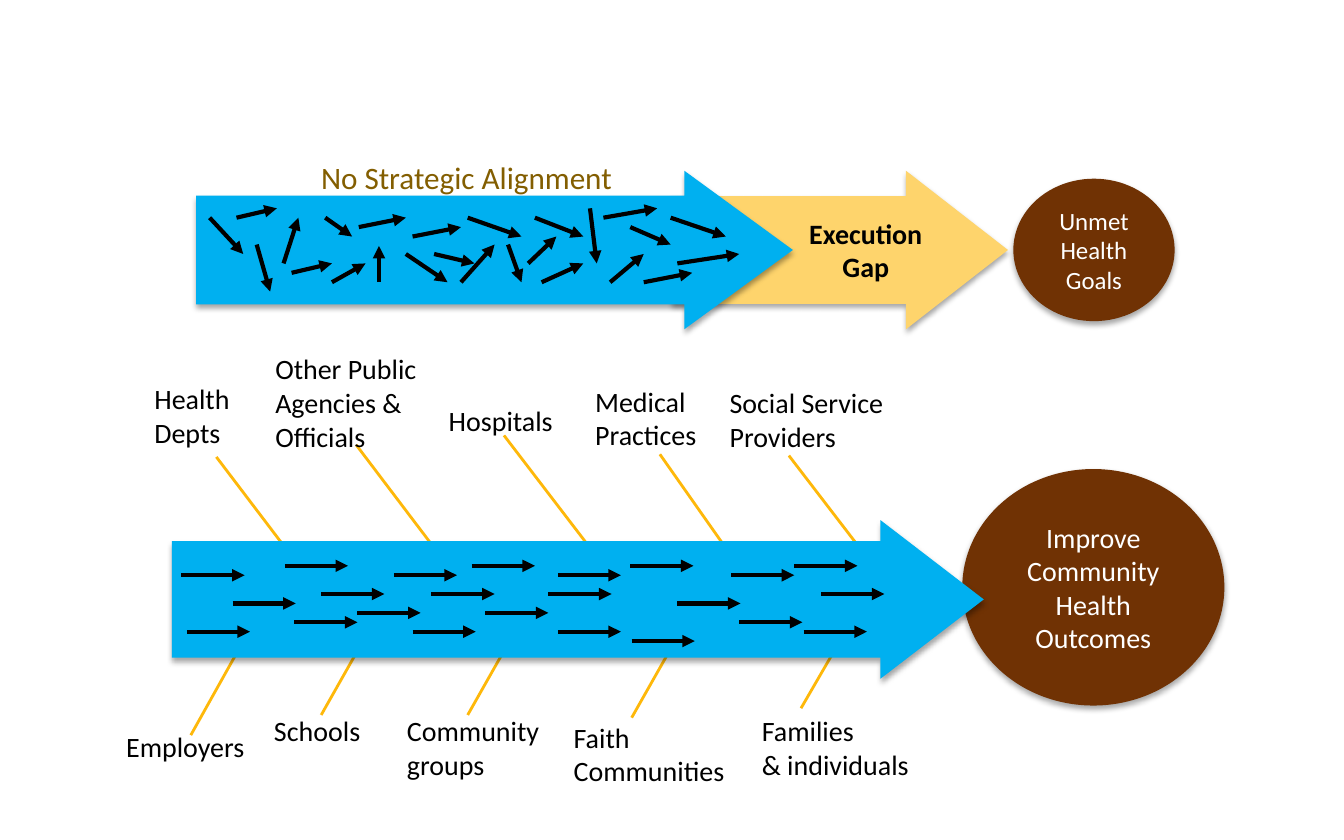
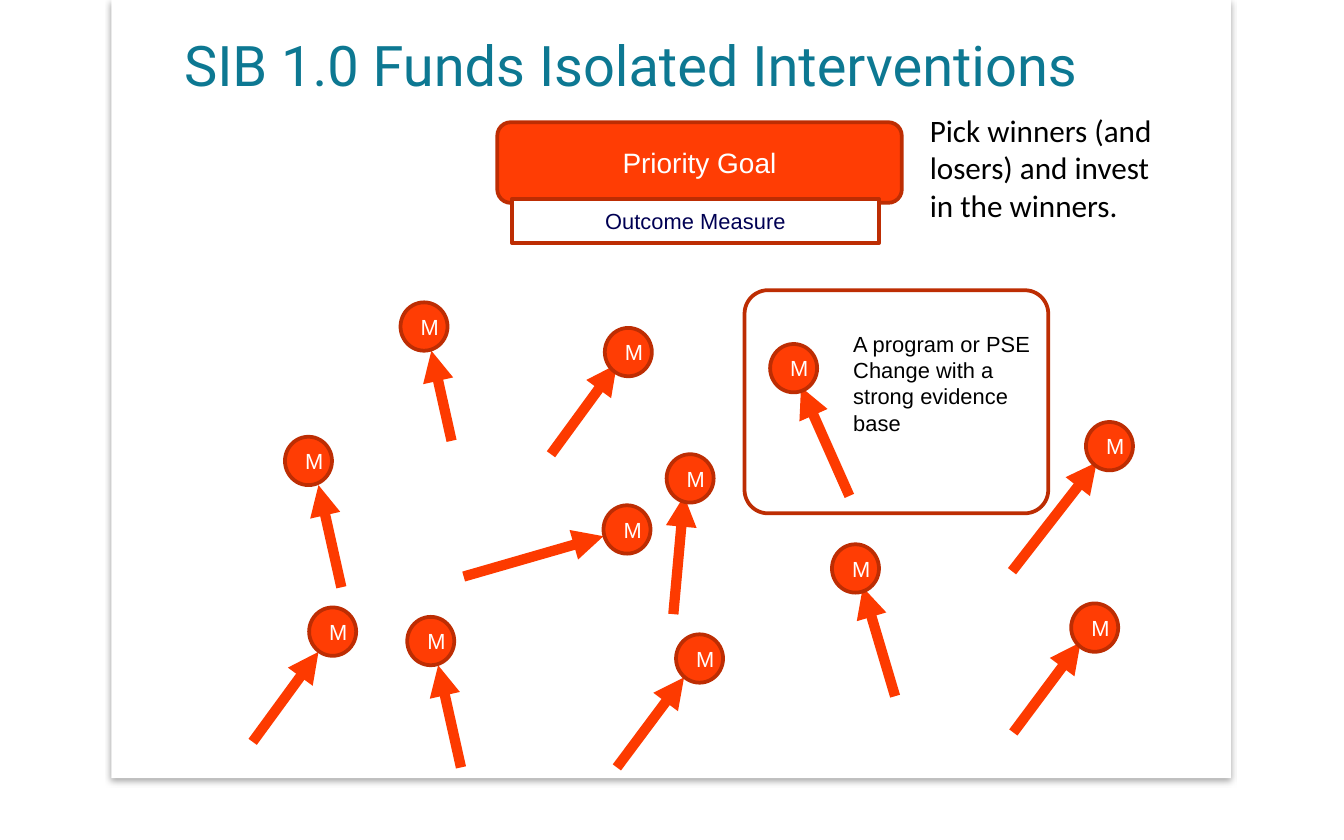
"""Build two slides: a fishbone of health partners and a map of isolated interventions."""
from lxml import etree
from pptx import Presentation
from pptx import util as u
from pptx.dml.color import RGBColor
from pptx.enum import shapes, text
from pptx.oxml import ns

BLACK, WHITE = "000000", "FFFFFF"
BLUE, GOLD, SAND, BROWN = "00B0F0", "FEB80A", "FED46C", "703204"
RED, RUST, FLAME = "FF3D04", "BD2D03", "FD3A00"
KIND = shapes.MSO_SHAPE


def put(page, box, words="", kind=None, fill=None, line=None, adj=(), shade=False,
        size=15, font="Calibri", color=BLACK, bold=False, wrap=True, mid=False, pad=None):
    """Add a shape, or a text box when kind is None, with formatted text."""
    area = [u.Inches(n) for n in box]
    if kind is None:
        item = page.shapes.add_textbox(*area)
    else:
        item = page.shapes.add_shape(kind, *area)
        item.shadow.inherit = False
        for spot, part in enumerate(adj):
            item.adjustments[spot] = part
        if fill:
            item.fill.solid()
            item.fill.fore_color.rgb = RGBColor.from_string(fill)
        else:
            item.fill.background()
        if line:
            item.line.color.rgb = RGBColor.from_string(line)
            item.line.width = u.Pt(2)
        else:
            item.line.fill.background()
        if shade:
            glow = etree.SubElement(
                item.element.spPr.find(ns.qn("a:effectLst")), ns.qn("a:outerShdw"),
                blurRad=str(u.Pt(3.1)), dist=str(u.Pt(1.8)), dir="5400000", rotWithShape="0")
            tint = etree.SubElement(glow, ns.qn("a:srgbClr"), val=BLACK)
            etree.SubElement(tint, ns.qn("a:alpha"), val="35000")
    if not words:
        return
    frame = item.text_frame
    frame.word_wrap = wrap
    if kind is None and not mid:
        frame.auto_size = text.MSO_AUTO_SIZE.SHAPE_TO_FIT_TEXT
    frame.vertical_anchor = text.MSO_ANCHOR.MIDDLE if kind or mid else text.MSO_ANCHOR.TOP
    if pad:
        (frame.margin_left, frame.margin_top,
         frame.margin_right, frame.margin_bottom) = [u.Inches(n) for n in pad]
    for rank, row in enumerate(words.split("\n")):
        para = frame.add_paragraph() if rank else frame.paragraphs[0]
        para.alignment = text.PP_ALIGN.CENTER if kind else text.PP_ALIGN.LEFT
        run = para.add_run()
        run.text = row
        run.font.size = u.Pt(size)
        run.font.name = font
        run.font.bold = bold
        run.font.color.rgb = RGBColor.from_string(color)


def link(page, ends, color, width, head=True):
    """Add a straight line, with an arrowhead at its end if asked."""
    item = page.shapes.add_connector(
        shapes.MSO_CONNECTOR.STRAIGHT, *[u.Inches(n) for n in ends])
    item.line.color.rgb = RGBColor.from_string(color)
    item.line.width = u.Pt(width)
    if head:
        etree.SubElement(item.line._get_or_add_ln(), ns.qn("a:tailEnd"), type="triangle")
    etree.SubElement(item.element.spPr, ns.qn("a:effectLst"))


deck = Presentation()
deck.slide_width, deck.slide_height = u.Inches(10), u.Inches(6.25)
fish, sib = [deck.slides.add_slide(deck.slide_layouts[6]) for _ in range(2)]

bones = [
    (3.4, 4.3, 2.65, 3.31), (2.27, 4.27, 1.61, 3.4), (5.43, 4.12, 4.91, 3.38),
    (6.56, 4.29, 5.87, 3.39), (4.5, 4.22, 3.75, 3.24), (2.39, 5.32, 2.82, 4.56),
    (4.7, 5.34, 5, 4.81), (3.48, 5.32, 3.91, 4.56), (5.96, 5.27, 6.29, 4.7),
    (1.42, 5.47, 1.85, 4.7),
]
for bone in bones:
    link(fish, bone, GOLD, 1.5, head=False)

put(fish, (5, 1.27, 2.5, 1.18), "Execution\nGap", KIND.RIGHT_ARROW, SAND,
    adj=(0.679, 0.643), shade=True, bold=True, pad=(0.95, 0.05, 0.05, 0.05))
put(fish, (2.29, 1.13, 2.61, 0.38), "No Strategic Alignment", size=16.7, color="835E01")
put(fish, (1.46, 1.27, 4.44, 1.18), kind=KIND.RIGHT_ARROW, fill=BLUE,
    adj=(0.685, 0.685), shade=True)

strays = [
    (1.56, 1.62, 1.81, 1.89), (1.76, 1.62, 2.06, 1.55), (1.91, 1.82, 2.01, 2.17),
    (2.11, 1.96, 2.22, 1.62), (2.17, 2.03, 2.47, 1.96), (2.42, 1.62, 2.62, 1.76),
    (2.47, 2.1, 2.72, 1.96), (2.82, 2.1, 2.82, 1.83), (2.67, 1.69, 3.02, 1.62),
    (3.02, 1.89, 3.33, 2.1), (3.07, 1.76, 3.43, 1.69), (3.23, 1.89, 3.53, 1.96),
    (3.43, 2.1, 3.68, 1.82), (3.48, 1.62, 3.88, 1.76), (3.78, 1.82, 3.88, 2.1),
    (3.93, 1.96, 4.14, 1.76), (3.98, 1.62, 4.34, 1.76), (4.03, 2.1, 4.34, 1.96),
    (4.39, 1.55, 4.44, 1.96), (4.49, 1.62, 4.89, 1.55), (4.69, 1.69, 4.99, 1.82),
    (4.54, 2.1, 4.79, 1.89), (4.79, 2.1, 5.15, 2.03), (4.99, 1.62, 5.4, 1.76),
    (5.04, 1.96, 5.5, 1.89),
]
for stray in strays:
    link(fish, stray, BLACK, 2.25)

put(fish, (7.54, 1.33, 1.2, 1.06), "Unmet\nHealth\nGoals", KIND.OVAL, BROWN,
    shade=True, size=13.3, color=WHITE)
put(fish, (7.16, 3.49, 1.95, 1.76), "Improve Community Health Outcomes", KIND.OVAL, BROWN,
    shade=True, color=WHITE)
put(fish, (1.28, 3.87, 6.04, 1.18), kind=KIND.RIGHT_ARROW, fill=BLUE,
    adj=(0.735, 0.651), shade=True)

lanes = {
    4.21: (2.12, 3.51, 4.69, 5.91),
    4.28: (1.35, 2.93, 4.15, 5.44),
    4.42: (2.39, 3.21, 4.08, 6.11),
    4.49: (1.73, 5.04),
    4.56: (2.66, 3.61),
    4.63: (2.19, 5.5),
    4.7: (1.39, 3.07, 4.15, 5.98),
    4.77: (4.7,),
}
for y, starts in lanes.items():
    for x in starts:
        link(fish, (x, y, x + 0.47, y), BLACK, 2.25)

labels = [
    ("Health Depts", (1.05, 2.79, 0.92, 0.61), True),
    ("Other Public Agencies & Officials", (1.95, 2.57, 1.3, 0.86), True),
    ("Hospitals", (3.24, 2.95, 0.98, 0.35), False),
    ("Medical Practices", (4.33, 2.81, 1.03, 0.61), True),
    ("Social Service Providers", (5.33, 2.82, 1.52, 0.61), True),
    ("Employers", (0.84, 5.38, 1.09, 0.35), False),
    ("Schools", (1.94, 5.26, 1.25, 0.35), True),
    ("Community\ngroups", (2.93, 5.26, 1.2, 0.61), False),
    ("Faith Communities", (4.17, 5.31, 1.43, 0.61), True),
    ("Families\n& individuals", (5.57, 5.26, 1.31, 0.61), False),
]
for words, box, wrap in labels:
    put(fish, box, words, wrap=wrap)

put(sib, (0.83, 0, 8.33, 5.79), kind=KIND.RECTANGLE, fill=WHITE, shade=True)

efforts = [
    ((1.88, 5.52, 2.37, 4.85), (2.3, 4.52)),
    ((3.43, 5.71, 3.26, 4.95), (3.03, 4.59)),
    ((4.59, 5.71, 5.09, 5.04), (5.03, 4.72)),
    ((6.66, 5.18, 6.42, 4.37), (6.19, 4.05)),
    ((7.54, 5.45, 8.04, 4.78), (7.97, 4.49)),
    ((7.53, 4.25, 8.16, 3.44), (8.08, 3.14)),
    ((4.1, 3.38, 4.59, 2.71), (4.5, 2.44)),
    ((5.01, 4.57, 5.09, 3.69), (4.96, 3.38)),
    ((2.54, 4.37, 2.37, 3.61), (2.12, 3.25)),
    ((3.36, 3.28, 3.21, 2.61), (2.98, 2.25)),
    ((3.45, 4.29, 4.49, 3.99), (4.49, 3.76)),
    ((6.32, 3.69, 5.96, 2.88), (5.73, 2.56)),
]
for ends, spot in efforts:
    link(sib, ends, FLAME, 5.5)
    put(sib, (*spot, 0.35, 0.36), "M", KIND.OVAL, RED, RUST,
        size=11.7, font="Arial", color=WHITE)

put(sib, (3.7, 0.91, 3.01, 0.6), "Priority Goal", KIND.ROUNDED_RECTANGLE, RED, RUST,
    font="Arial", color=WHITE)
put(sib, (3.81, 1.48, 2.73, 0.33), "Outcome Measure", KIND.RECTANGLE, WHITE, RUST,
    size=11.7, font="Arial", color="000053")
put(sib, (6.25, 2.41, 1.62, 0.89), "A program or PSE Change with a strong evidence base",
    size=11.7, font="Arial")
put(sib, (5.54, 2.16, 2.26, 1.66), kind=KIND.ROUNDED_RECTANGLE, line=RUST, adj=(0.105,))
put(sib, (1.29, 0.08, 7.64, 0.8), "SIB 1.0 Funds Isolated Interventions",
    size=30, font="Roboto", color="0D7892", mid=True, pad=(0.08,) * 4)
put(sib, (6.82, 0.78, 1.93, 0.94), "Pick winners (and losers) and invest in the winners.",
    size=16.7)

deck.save("out.pptx")
